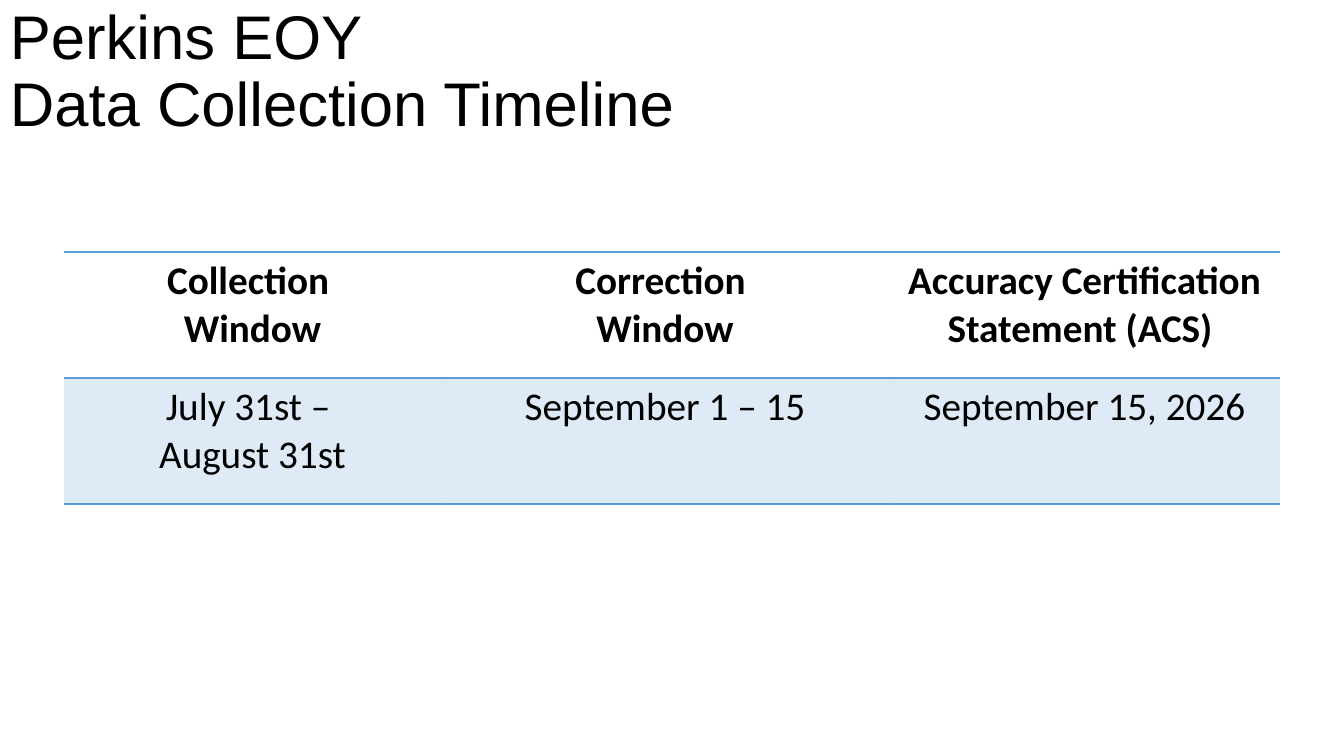
import pptx
import pptx.util
import pptx.dml.color
import pptx.enum.text
import pptx.oxml
import pptx.oxml.ns

INK = "000000"
BLUE = "5B9BD5"


def color(code):
    return pptx.dml.color.RGBColor.from_string(code)


def px(count):
    return pptx.util.Emu(round(count * 12192000 / 1344))


class Deck:
    def __init__(self):
        self.show = pptx.Presentation()
        self.show.slide_width = px(1344)
        self.show.slide_height = px(756)
        self.slide = self.show.slides.add_slide(self.show.slide_layouts[6])

    def style(self, para, face, size, bold=False):
        font = para.font
        font.name = face
        font.size = pptx.util.Pt(size)
        font.bold = bold
        font.color.rgb = color(INK)

    def title(self, text, left, top, width, height):
        frame = self.slide.shapes.add_textbox(px(left), px(top), px(width), px(height)).text_frame
        frame.word_wrap = True
        frame.vertical_anchor = pptx.enum.text.MSO_ANCHOR.MIDDLE
        para = frame.paragraphs[0]
        para.text = text
        para.line_spacing = 0.9
        self.style(para, "Arial", 44)

    def border(self, cell, sides):
        props = cell._tc.get_or_add_tcPr()
        for spot, side in enumerate(("L", "R", "T", "B")):
            fill = (f'<a:solidFill><a:srgbClr val="{BLUE}"/></a:solidFill>'
                    if side in sides else "<a:noFill/>")
            props.insert(spot, pptx.oxml.parse_xml(
                f'<a:ln{side} {pptx.oxml.ns.nsdecls("a")} w="12700">{fill}</a:ln{side}>'))

    def tint(self, cell, share):
        cell.fill.solid()
        cell.fill.fore_color.rgb = color(BLUE)
        shade = cell._tc.tcPr.find(".//" + pptx.oxml.ns.qn("a:srgbClr"))
        shade.append(pptx.oxml.parse_xml(
            f'<a:alpha {pptx.oxml.ns.nsdecls("a")} val="{share * 1000}"/>'))

    def table(self, rows, left, top, widths, height):
        table = self.slide.shapes.add_table(
            len(rows), len(widths), px(left), px(top),
            px(sum(widths)), px(height * len(rows))).table
        table.horz_banding = False
        for column, width in zip(table.columns, widths):
            column.width = px(width)
        for r, texts in enumerate(rows):
            table.rows[r].height = px(height)
            head = r == 0
            for c, text in enumerate(texts):
                cell = table.cell(r, c)
                cell.text = text
                for para in cell.text_frame.paragraphs:
                    para.alignment = pptx.enum.text.PP_ALIGN.CENTER
                    self.style(para, "Calibri", 28, head)
                if head:
                    cell.fill.background()
                else:
                    self.tint(cell, 20)
                self.border(cell, "TB")


def main():
    deck = Deck()
    deck.title("Perkins EOY \vData Collection Timeline", 0, 0, 1159, 146)
    deck.table([
        ["Collection \nWindow", "Correction \nWindow", "Accuracy Certification Statement (ACS) "],
        ["July 31st – \nAugust 31st", "September 1 – 15", "September 15, 2026"],
    ], 64, 252, [377, 448, 391], 126)
    deck.show.save("out.pptx")


if __name__ == "__main__":
    main()
